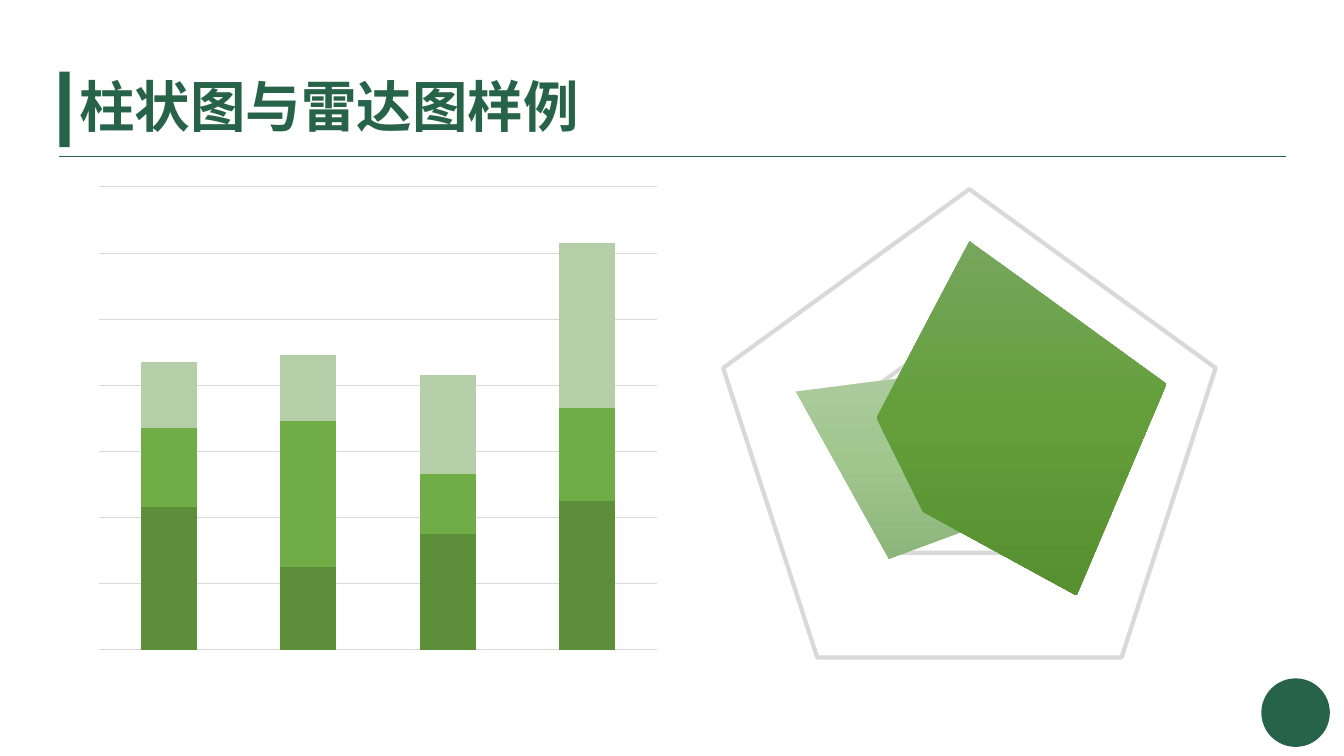
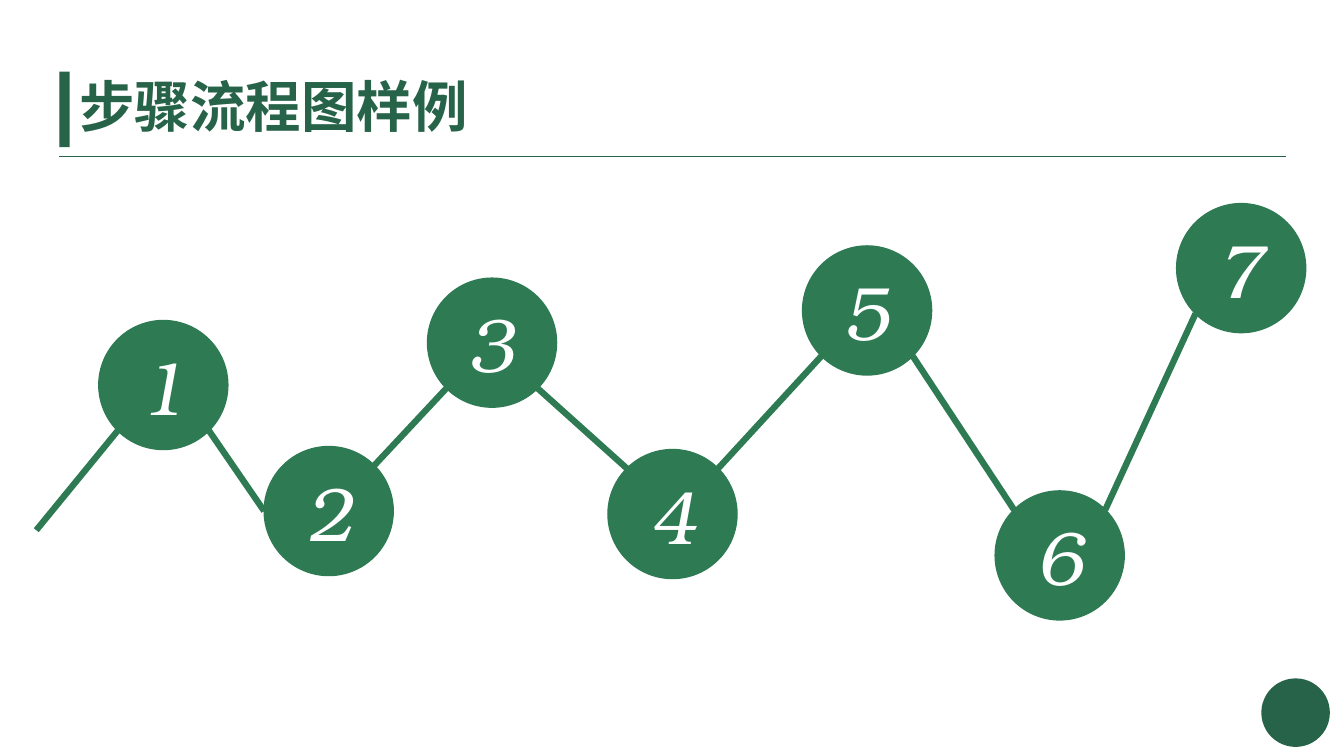
"""Build two sample slides: a pair of charts and a seven-step flow."""
import math

import lxml.etree
import pptx
import pptx.chart.data
import pptx.dml.color
import pptx.enum.chart
import pptx.enum.shapes
import pptx.enum.text
import pptx.oxml.ns
import pptx.util

Inches, Pt = pptx.util.Inches, pptx.util.Pt
qn = pptx.oxml.ns.qn
CHART = pptx.enum.chart.XL_CHART_TYPE
SHAPE = pptx.enum.shapes.MSO_SHAPE

COLORS = {
    "theme": "276349", "step": "2D7A53", "white": "FFFFFF", "black": "000000", "grid": "D9D9D9",
    "bar_dark": "5D8F3B", "bar_mid": "70AD47", "bar_light": "B4CFA8",
    "dark_top": "77A65D", "dark_mid": "639E3A", "dark_end": "579030",
    "light_top": "ACCB9D", "light_mid": "A0C68E", "light_end": "8DB47B",
}
TITLE_FONT, STEP_FONT, CHART_FONT = "Noto Sans CJK SC", "TeX Gyre Bonum", "Calibri"

CHARTS_TITLE = "柱状图与雷达图样例"
RADAR = {
    "type": CHART.RADAR_FILLED, "box": (5.8, 1.77, 7.63, 5.35),
    "max": 125, "unit": 62.5, "grid": 3,
    "series": [
        ((100, 100, 88, 38, 47), ("dark_top", "dark_mid", "dark_end")),
        ((38, 38, 38, 66, 88), ("light_top", "light_mid", "light_end")),
    ],
}
COLUMNS = {
    "type": CHART.COLUMN_STACKED, "box": (0.87, 1.76, 5.76, 4.78),
    "max": 280, "unit": 40, "grid": 0.75,
    "series": [
        ((86, 50, 70, 90), ("bar_dark",)),
        ((48, 88, 36, 56), ("bar_mid",)),
        ((40, 40, 60, 100), ("bar_light",)),
    ],
}

STEPS_TITLE = "步骤流程图样例"
STEP_SIZE = 1.28
STEPS = [(0.98, 3.18), (2.62, 4.43), (4.24, 2.76), (6.03, 4.46),
         (7.96, 2.44), (9.87, 4.87), (11.67, 2.02)]
FLOW_START = (0.36, 5.26)
SIDE_ENTRY = 1


def rgb(name):
    return pptx.dml.color.RGBColor.from_string(COLORS[name])


def add_solid(s, kind, box, color):
    sp = s.shapes.add_shape(kind, *map(Inches, box))
    sp.shadow.inherit = False
    sp.fill.solid()
    sp.fill.fore_color.rgb = rgb(color)
    sp.line.fill.background()
    return sp


def add_line(s, start, end, color, width):
    cx = s.shapes.add_connector(pptx.enum.shapes.MSO_CONNECTOR.STRAIGHT,
                                *map(Inches, (*start, *end)))
    cx.line.color.rgb = rgb(color)
    cx.line.width = Pt(width)
    lxml.etree.SubElement(cx._element.spPr, qn("a:effectLst"))


def write(sp, text, font, size, color):
    tf = sp.text_frame
    tf.text = text
    tf.word_wrap = True
    tf.vertical_anchor = pptx.enum.text.MSO_ANCHOR.MIDDLE
    p = tf.paragraphs[0]
    r = p.runs[0]
    r.font.name, r.font.size = font, Pt(size)
    r.font.color.rgb = rgb(color)
    ea = lxml.etree.SubElement(r.font._element, qn("a:ea"))
    ea.set("typeface", font)
    return p, r


def add_titled_slide(prs, title):
    s = prs.slides.add_slide(prs.slide_layouts[6])
    add_solid(s, SHAPE.RECTANGLE, (0.59, 0.71, 0.1, 0.75), "theme")
    add_line(s, (0.59, 1.55), (12.75, 1.55), "theme", 0.5)
    add_solid(s, SHAPE.OVAL, (12.51, 6.73, 0.68, 0.68), "theme")
    box = s.shapes.add_textbox(*map(Inches, (0.69, 0.71, 12.07, 0.75)))
    p, r = write(box, title, TITLE_FONT, 39.6, "theme")
    p.line_spacing = 0.9
    r.font.bold = True
    return s


def fill_series(ser, names):
    fill = ser.format.fill
    if len(names) == 1:
        fill.solid()
        fill.fore_color.rgb = rgb(names[0])
        return
    fill.gradient()
    fill.gradient_angle = 270
    stops = ser._element.find(".//" + qn("a:gsLst"))
    for stop in list(stops):
        stops.remove(stop)
    for i, name in enumerate(names):
        gs = lxml.etree.SubElement(stops, qn("a:gs"), pos=str(i * 100000 // (len(names) - 1)))
        lxml.etree.SubElement(gs, qn("a:srgbClr"), val=COLORS[name])


def add_plain_chart(s, spec_):
    data = pptx.chart.data.CategoryChartData()
    data.categories = [str(i + 1) for i in range(len(spec_["series"][0][0]))]
    for i, (values, _) in enumerate(spec_["series"], 1):
        data.add_series(f"Series {i}", values)
    chart = s.shapes.add_chart(spec_["type"], *map(Inches, spec_["box"]), data).chart
    chart.has_legend = chart.has_title = False
    chart.font.name, chart.font.size = CHART_FONT, Pt(10)
    chart.font.color.rgb = rgb("black")
    chart.category_axis.has_major_gridlines = False
    chart.category_axis.visible = False
    axis = chart.value_axis
    axis.visible = False
    axis.minimum_scale, axis.maximum_scale = 0, spec_["max"]
    axis.major_unit = spec_["unit"]
    axis.has_major_gridlines = True
    axis.major_gridlines.format.line.color.rgb = rgb("grid")
    axis.major_gridlines.format.line.width = Pt(spec_["grid"])
    plot = chart.plots[0]
    plot.vary_by_categories = False
    for ser, (_, names) in zip(plot.series, spec_["series"]):
        fill_series(ser, names)
    return plot


def build_charts(prs):
    s = add_titled_slide(prs, CHARTS_TITLE)
    add_plain_chart(s, RADAR)
    plot = add_plain_chart(s, COLUMNS)
    plot.gap_width, plot.overlap = 150, 100


def build_steps(prs):
    s = add_titled_slide(prs, STEPS_TITLE)
    for i, (x, y) in enumerate(STEPS, 1):
        sp = add_solid(s, SHAPE.OVAL, (x, y, STEP_SIZE, STEP_SIZE), "step")
        sp.line.color.rgb = rgb("step")
        sp.line.width = Pt(1)
        p, r = write(sp, str(i), STEP_FONT, 54, "white")
        p.alignment = pptx.enum.text.PP_ALIGN.CENTER
        r.font.italic = True

    radius = STEP_SIZE / 2
    reach = radius / math.sqrt(2)
    start = FLOW_START
    for i, (x, y) in enumerate(STEPS):
        cx, cy = x + radius, y + radius
        edge = cy + reach if i % 2 == 0 else cy - reach
        end = (x, cy) if i == SIDE_ENTRY else (cx - reach, edge)
        add_line(s, start, end, "step", 4.5)
        start = (cx + reach, edge)


def main():
    prs = pptx.Presentation()
    prs.slide_width, prs.slide_height = Inches(13.33), Inches(7.5)
    build_charts(prs)
    build_steps(prs)
    prs.save("out.pptx")


if __name__ == "__main__":
    main()
